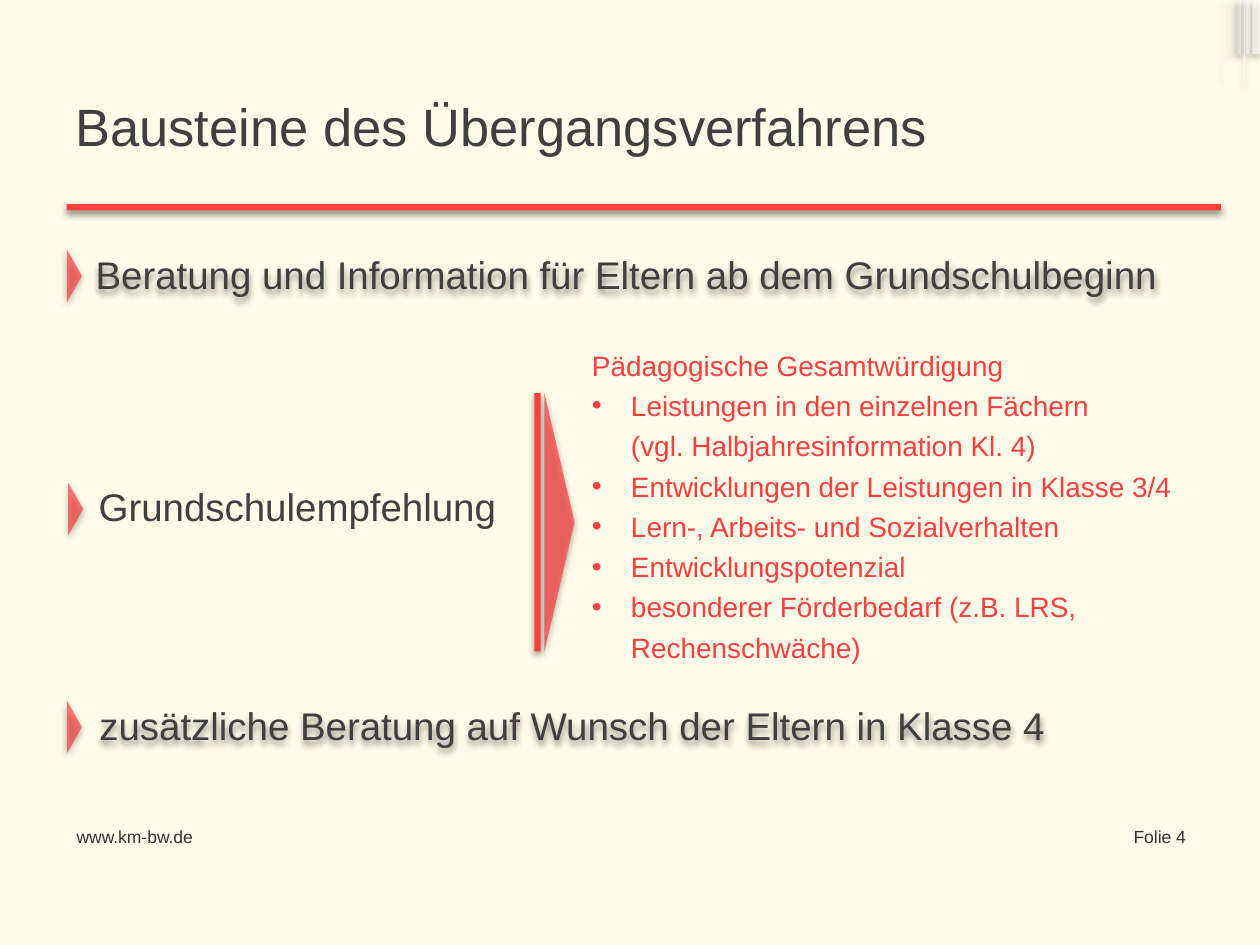
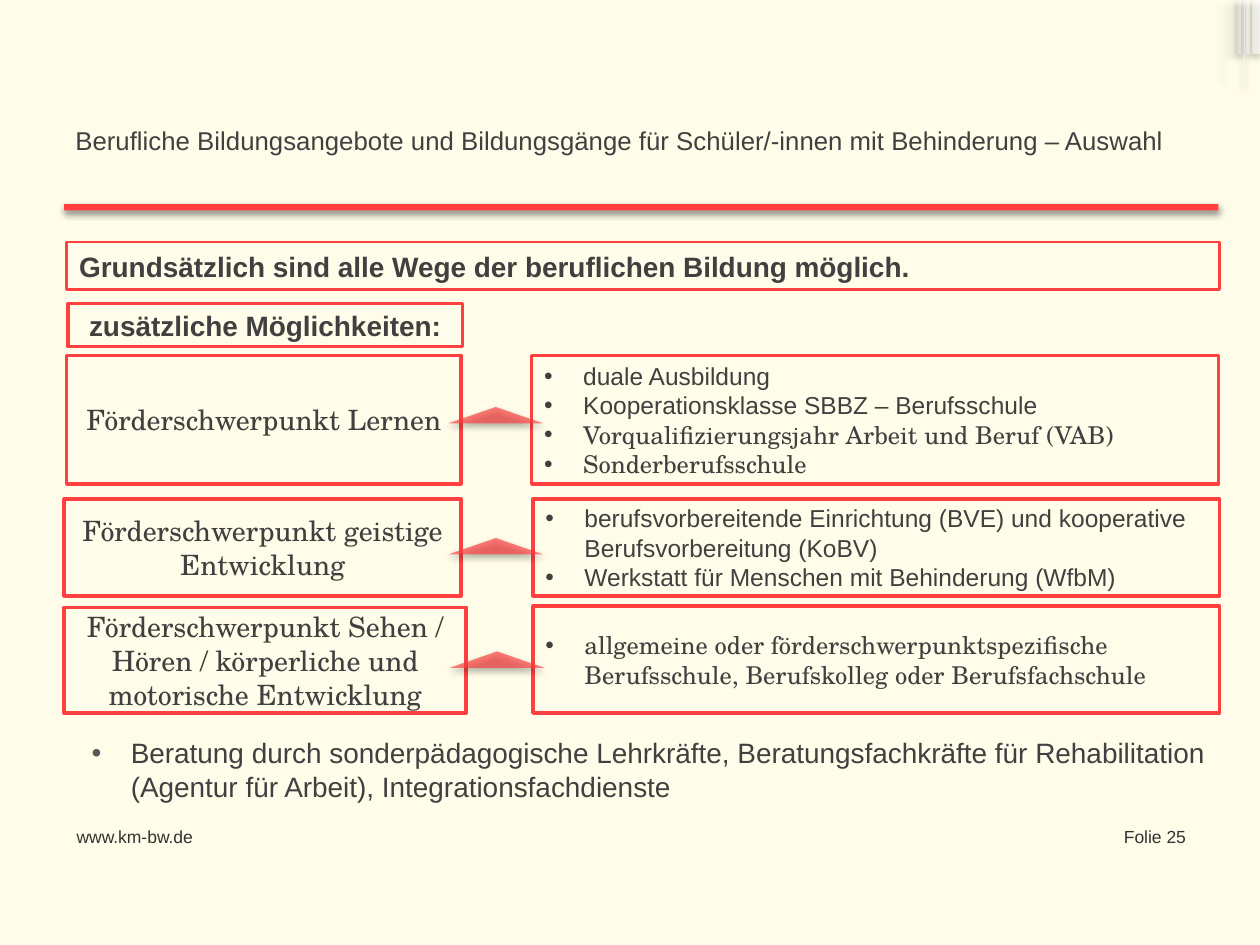
import pptx
import pptx.util
import pptx.dml.color
import pptx.enum.shapes
import pptx.enum.text
import pptx.oxml.ns
from lxml import etree

RGB = pptx.dml.color.RGBColor
MSO = pptx.enum.shapes.MSO_SHAPE
ALIGN = pptx.enum.text.PP_ALIGN
ANCHOR = pptx.enum.text.MSO_ANCHOR
qn = pptx.oxml.ns.qn

# Shared style: 100 px to the inch
PX = 9144
CREAM = RGB(0xFF, 0xFD, 0xE9)
RED = RGB(0xFF, 0x40, 0x40)
DARK = RGB(0x40, 0x40, 0x40)
GREY = RGB(0x59, 0x59, 0x59)
FOOT = RGB(0x32, 0x32, 0x32)
WHITE = RGB(0xFF, 0xFF, 0xFF)
SANS = "Arial"
SERIF = "TeX Gyre Schola"
INDENT = 31

# Corner stripes: left, width, height, opacity
STRIPES = [(989, 3, 43, 65), (994, 6, 43, 65), (970, 1, 64, 30),
           (987, 1, 68, 60), (975, 6, 43, 20), (982, 3, 43, 40)]


class Deck:
    """Holds the style and the current slide."""

    def __init__(self):
        self.prs = pptx.Presentation()
        self.prs.slide_width = 1000 * PX
        self.prs.slide_height = 750 * PX
        self.s = None

    def slide(self, title, number, size=30, title_height=77, rule_left=53):
        self.s = self.prs.slides.add_slide(self.prs.slide_layouts[6])
        self.s.background.fill.solid()
        self.s.background.fill.fore_color.rgb = CREAM
        for x, w, h, opacity in STRIPES:
            self.shape(x, 0, w, h, fill=WHITE, opacity=opacity, shadow=40)
        self.text(51, 651, 133, 39, ["www.km-bw.de"], size=10, color=FOOT, anchor=ANCHOR.TOP)
        self.text(854, 651, 97, 39, [f"Folie {number}"], size=10, color=FOOT,
                  anchor=ANCHOR.TOP, align=ALIGN.RIGHT)
        self.text(50, 61, 900, title_height, [title], size=size)
        self.shape(rule_left, 162, 916, 5, fill=RED, shadow=45)

    def shape(self, x, y, w, h, kind=MSO.RECTANGLE, fill=None, opacity=100,
              line=None, shadow=0):
        sp = self.s.shapes.add_shape(kind, x * PX, y * PX, w * PX, h * PX)
        if fill is None:
            sp.fill.background()
        else:
            sp.fill.solid()
            sp.fill.fore_color.rgb = fill
            if opacity < 100:
                clr = sp._element.spPr.find(".//" + qn("a:srgbClr"))
                etree.SubElement(clr, qn("a:alpha"), val=str(opacity * 1000))
        if line is None:
            sp.line.fill.background()
        else:
            sp.line.color.rgb = RED
            sp.line.width = pptx.util.Pt(line)
        sp.shadow.inherit = False
        if shadow:
            effects = sp._element.spPr.find(qn("a:effectLst"))
            outer = etree.SubElement(effects, qn("a:outerShdw"), blurRad="50800",
                                     dist="25400", dir="5400000", rotWithShape="0")
            clr = etree.SubElement(outer, qn("a:srgbClr"), val="000000")
            etree.SubElement(clr, qn("a:alpha"), val=str(shadow * 1000))
        return sp

    def arrow(self, x, y, w, h, opacity=68, rotation=0):
        sp = self.shape(x, y, w, h, MSO.PENTAGON, RED, opacity, shadow=45)
        sp.adjustments[0] = 0.994
        sp.rotation = rotation

    def text(self, x, y, w, h, paragraphs, **style):
        sp = self.s.shapes.add_textbox(x * PX, y * PX, w * PX, h * PX)
        self.fill_text(sp, paragraphs, **style)

    def box(self, x, y, w, h, paragraphs, line=2, **style):
        self.fill_text(self.shape(x, y, w, h, line=line), paragraphs, **style)

    def fill_text(self, sp, paragraphs, anchor=ANCHOR.MIDDLE, **style):
        """Each paragraph is a string, or a string with its own style changes."""
        tf = sp.text_frame
        tf.word_wrap = True
        tf.vertical_anchor = anchor
        for i, item in enumerate(paragraphs):
            text, changes = (item, {}) if isinstance(item, str) else item
            p = tf.paragraphs[0] if i == 0 else tf.add_paragraph()
            self.paragraph(p, text, **{**style, **changes})

    def paragraph(self, p, text, size=16, name=SANS, color=DARK, bold=False,
                  align=ALIGN.LEFT, spacing=None, left=0, bullet=None):
        for key, value in {"alignment": align, "line_spacing": spacing}.items():
            setattr(p, key, value)
        pPr = p._p.get_or_add_pPr()
        pPr.set("marL", str(left * PX))
        pPr.set("indent", str(-INDENT * PX if bullet else 0))
        if bullet:
            clr = etree.SubElement(pPr, qn("a:buClr"))
            etree.SubElement(clr, qn("a:srgbClr"), val=str(bullet))
            etree.SubElement(pPr, qn("a:buFont"), typeface=SANS)
            etree.SubElement(pPr, qn("a:buChar"), char="•")
        r = p.add_run()
        r.text = text
        for key, value in {"size": pptx.util.Pt(size), "name": name, "bold": bold}.items():
            setattr(r.font, key, value)
        r.font.color.rgb = color


def build_modules(deck):
    deck.slide("Bausteine des Übergangsverfahrens", 4)

    # Assessment criteria
    deck.text(460, 265, 513, 268, [
        ("Pädagogische Gesamtwürdigung", {"left": 0, "bullet": None}),
        "Leistungen in den einzelnen Fächern",
        ("(vgl. Halbjahresinformation Kl. 4)", {"bullet": None}),
        "Entwicklungen der Leistungen in Klasse 3/4",
        "Lern-, Arbeits- und Sozialverhalten",
        "Entwicklungspotenzial",
        "besonderer Förderbedarf (z.B. LRS, Rechenschwäche)",
    ], color=RED, spacing=1.2, left=INDENT, bullet=RED)
    deck.arrow(432, 312, 24, 205, opacity=70)
    deck.shape(424, 312, 5, 205, fill=RED, shadow=45)

    # Three modules with their markers
    for x, y, h, label in [
        (66, 178, 79, "Beratung und Information für Eltern ab dem Grundschulbeginn"),
        (69, 548, 55, "zusätzliche Beratung auf Wunsch der Eltern in Klasse 4"),
    ]:
        sp = deck.shape(x, y, 875, h, MSO.FLOWCHART_PROCESS, shadow=45)
        deck.fill_text(sp, [label], size=22)
    deck.text(62, 288, 348, 228, ["Grundschulempfehlung"], size=22, align=ALIGN.CENTER)
    for x, y in [(53, 198), (54, 383), (53, 556)]:
        deck.arrow(x, y, 12, 42)


def build_vocational(deck):
    deck.slide("Berufliche Bildungsangebote und Bildungsgänge für Schüler/-innen "
               "mit Behinderung – Auswahl", 25, size=14.7, title_height=101, rule_left=51)

    # Headings
    deck.box(53, 192, 915, 38,
             ["Grundsätzlich sind alle Wege der beruflichen Bildung möglich."],
             line=1.5, bold=True)
    deck.box(54, 241, 313, 34, ["zusätzliche Möglichkeiten:"], bold=True, align=ALIGN.CENTER)

    # Rows: focus box (left, top, width, height), offers box, arrow, texts
    serif = {"name": SERIF}
    rows = [
        ((53, 282, 313, 102), (422, 282, 545, 102), (387, 292), "Förderschwerpunkt Lernen",
         ["duale Ausbildung",
          "Kooperationsklasse SBBZ – Berufsschule",
          ("Vorqualifizierungsjahr Arbeit und Beruf (VAB)", serif),
          ("Sonderberufsschule", serif)]),
        ((51, 396, 315, 77), (423, 396, 545, 77), (387, 396),
         "Förderschwerpunkt geistige Entwicklung",
         ["berufsvorbereitende Einrichtung (BVE) und kooperative Berufsvorbereitung (KoBV)",
          "Werkstatt für Menschen mit Behinderung (WfbM)"]),
        ((51, 482, 319, 84), (423, 481, 545, 85), (388, 486),
         "Förderschwerpunkt Sehen / Hören / körperliche und motorische Entwicklung",
         [("allgemeine oder förderschwerpunktspezifische Berufsschule, "
           "Berufskolleg oder Berufsfachschule", serif)]),
    ]
    for focus_at, offers_at, arrow_at, focus, offers in rows:
        deck.box(*focus_at, [focus], name=SERIF, align=ALIGN.CENTER)
        deck.box(*offers_at, offers, size=14, left=INDENT, bullet=DARK)
        deck.arrow(*arrow_at, 13, 75, rotation=270)

    # Advice
    deck.text(51, 579, 916, 60, [
        "Beratung durch sonderpädagogische Lehrkräfte, Beratungsfachkräfte für "
        "Rehabilitation (Agentur für Arbeit), Integrationsfachdienste",
    ], anchor=ANCHOR.TOP, left=43, bullet=GREY)


def main():
    deck = Deck()
    build_modules(deck)
    build_vocational(deck)
    deck.prs.save("out.pptx")


if __name__ == "__main__":
    main()
